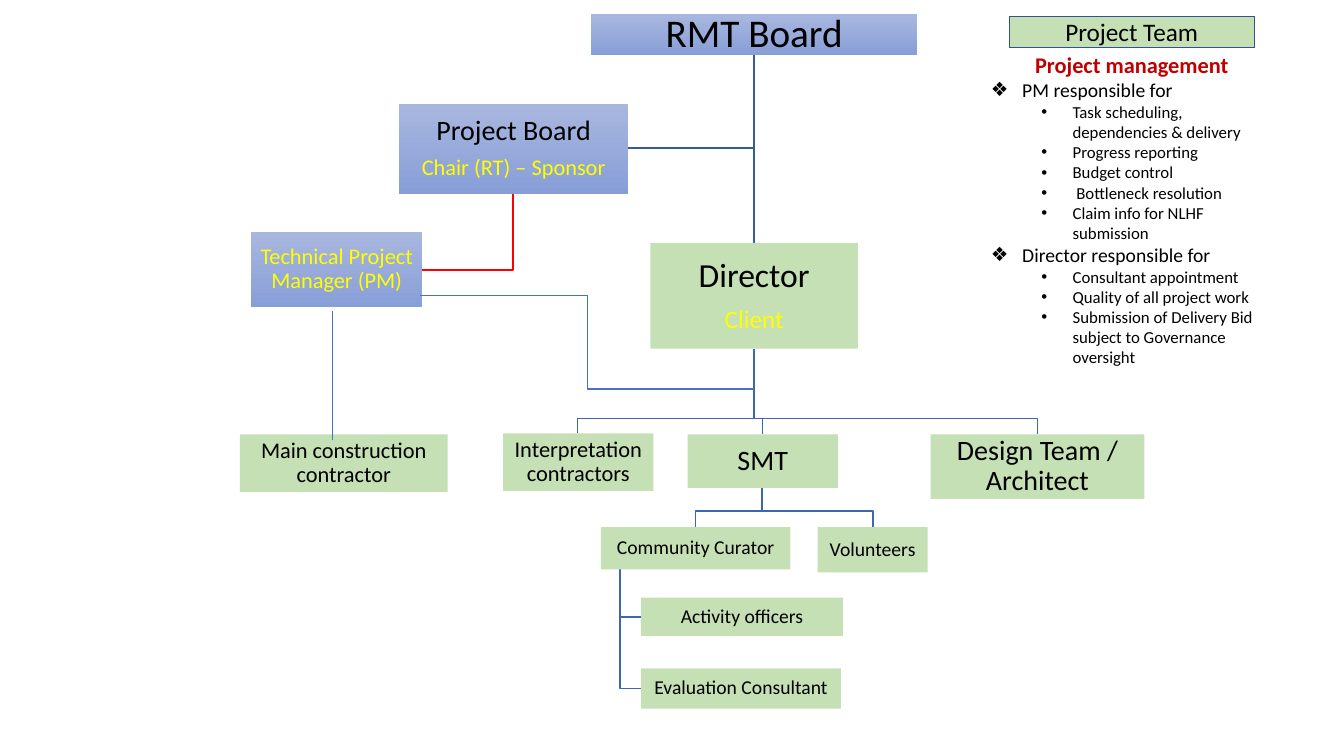
"""Builds the project governance organisation chart slide."""
from lxml import etree
from pptx import Presentation
from pptx.dml.color import RGBColor
from pptx.enum import shapes, text
from pptx.oxml import ns
from pptx.util import Inches, Pt

GREEN, BLACK, YELLOW, RED = "C5E0B4", "000000", "FFFF00", "FF0000"
NAVY, BLUE, ACCENT = "365B9D", "3E67B2", "4472C4"
GRADIENT = ("A8B7DF", "889ED7")
CENTER = text.PP_ALIGN.CENTER

BOXES = {
    "board": (5.86, 0.14, 3.24, 0.41, GRADIENT, [("RMT Board", 28, BLACK)]),
    "director": (6.45, 2.41, 2.06, 1.05, GREEN,
                 [("Director", 24, BLACK), ("Client", 18, YELLOW)]),
    "contractor": (2.38, 4.31, 2.06, 0.57, GREEN,
                   [("Main construction contractor", 16, BLACK)]),
    "interpretation": (4.99, 4.3, 1.49, 0.57, GREEN,
                       [("Interpretation contractors", 16, BLACK)]),
    "smt": (6.82, 4.31, 1.49, 0.53, GREEN, [("SMT", 20, BLACK)]),
    "curator": (5.96, 5.23, 1.88, 0.42, GREEN, [("Community Curator", 14, BLACK)]),
    "activity": (6.36, 5.93, 2, 0.38, GREEN, [("Activity officers", 14, BLACK)]),
    "evaluation": (6.36, 6.63, 1.98, 0.4, GREEN, [("Evaluation Consultant", 14, BLACK)]),
    "volunteers": (8.11, 5.23, 1.09, 0.45, GREEN, [("Volunteers", 14, BLACK)]),
    "design": (9.23, 4.31, 2.12, 0.64, GREEN, [("Design Team / Architect", 20, BLACK)]),
    "project_board": (3.96, 1.03, 2.27, 0.89, GRADIENT,
                      [("Project Board", 20, BLACK), ("Chair (RT) – Sponsor", 16, YELLOW)]),
    "manager": (2.49, 2.3, 1.7, 0.75, GRADIENT,
                [("Technical Project Manager (PM)", 16, YELLOW)]),
}

DUTIES = {
    "PM responsible for": [
        "Task scheduling, dependencies & delivery",
        "Progress reporting",
        "Budget control",
        " Bottleneck resolution",
        "Claim info for NLHF submission",
    ],
    "Director responsible for": [
        "Consultant appointment",
        "Quality of all project work",
        "Submission of Delivery Bid subject to Governance oversight",
    ],
}


def rgb(value):
    """Return the colour for a hex string."""
    return RGBColor.from_string(value)


def apply(obj, values):
    """Set each attribute of an object from a dict."""
    for name, value in values.items():
        setattr(obj, name, value)


def write(p, words, size, color, bold=False):
    """Add one formatted run to a paragraph."""
    r = p.add_run()
    r.text = words
    apply(r.font, {"name": "Calibri", "size": Pt(size), "bold": bold})
    r.font.color.rgb = rgb(color)


def paint(sp, fill):
    """Fill a shape with one colour or a vertical gradient."""
    if isinstance(fill, str):
        sp.fill.solid()
        sp.fill.fore_color.rgb = rgb(fill)
        return
    sp.fill.gradient()
    sp.fill.gradient_angle = 270
    for stop, color in zip(sp.fill.gradient_stops, fill):
        stop.color.rgb = rgb(color)


def stroke(sp, color, width):
    """Set the outline colour and width."""
    sp.line.color.rgb = rgb(color)
    sp.line.width = Pt(width)


def add_box(s, left, top, width, height, fill, lines):
    """Add a filled rectangle with centred lines of text."""
    sp = s.shapes.add_shape(shapes.MSO_SHAPE.RECTANGLE, Inches(left), Inches(top),
                            Inches(width), Inches(height))
    sp.shadow.inherit = False
    paint(sp, fill)
    sp.line.fill.background()
    tf = sp.text_frame
    margins = ("margin_left", "margin_top", "margin_right", "margin_bottom")
    apply(tf, dict.fromkeys(margins, Inches(0.01)))
    apply(tf, {"word_wrap": True, "vertical_anchor": text.MSO_ANCHOR.MIDDLE})
    for i, (words, size, color) in enumerate(lines):
        p = tf.add_paragraph() if i else tf.paragraphs[0]
        apply(p, {"alignment": CENTER, "line_spacing": 0.9,
                  "space_after": Pt(round(0.35 * size, 1))})
        write(p, words, size, color)
    return sp


def add_route(s, points, color):
    """Add an open line through the points."""
    start, *rest = [(Inches(x), Inches(y)) for x, y in points]
    builder = s.shapes.build_freeform(*start)
    builder.add_line_segments(rest, close=False)
    sp = builder.convert_to_shape()
    sp.shadow.inherit = False
    sp.fill.background()
    stroke(sp, color, 1)


def add_branches(s, x, top, bend, ends):
    """Add elbow lines from one parent down to each child."""
    for child, bottom in ends:
        add_route(s, [(x, top), (x, bend), (child, bend), (child, bottom)], BLUE)


def add_link(s, kind, start, end, color, width):
    """Add a connector between two points."""
    line = s.shapes.add_connector(kind, *map(Inches, start + end))
    stroke(line, color, width)
    etree.SubElement(line._element.spPr, ns.qn("a:effectLst"))
    return line


def add_bullet(tf, words, char, level, size):
    """Add a bulleted paragraph with a hanging indent."""
    p = tf.add_paragraph()
    p.level = level
    pPr = p._p.get_or_add_pPr()
    pPr.set("marL", str(Inches(0.31 + 0.5 * level)))
    pPr.set("indent", str(Inches(-0.31)))
    etree.SubElement(pPr, ns.qn("a:buFont")).set("typeface", "Arial")
    etree.SubElement(pPr, ns.qn("a:buChar")).set("char", char)
    write(p, words, size, BLACK)


def add_duties(s):
    """Add the project management responsibilities."""
    tf = s.shapes.add_textbox(Inches(9.73), Inches(0.46), Inches(2.99), Inches(3.26)).text_frame
    apply(tf, {"word_wrap": True, "auto_size": text.MSO_AUTO_SIZE.SHAPE_TO_FIT_TEXT})
    tf.paragraphs[0].alignment = CENTER
    write(tf.paragraphs[0], "Project management", 16, "C00000", True)
    for role, tasks in DUTIES.items():
        add_bullet(tf, role, "❖", 0, 14)
        for task in tasks:
            add_bullet(tf, task, "•", 1, 12)


def main():
    """Build and save the slide."""
    prs = Presentation()
    apply(prs, {"slide_width": Inches(13.33), "slide_height": Inches(7.5)})
    s = prs.slides.add_slide(prs.slide_layouts[6])

    add_route(s, [(5.09, 1.92), (5.09, 2.68), (4.19, 2.68)], RED)
    add_route(s, [(7.48, 0.55), (7.48, 1.47), (6.23, 1.47)], NAVY)
    add_branches(s, 7.48, 3.46, 4.15, [(10.29, 4.31), (7.56, 4.31), (5.73, 4.3)])
    add_branches(s, 7.56, 4.83, 5.07, [(8.66, 5.23), (6.9, 5.23)])
    for y in (6.83, 6.12):
        add_route(s, [(6.15, 5.65), (6.15, y), (6.36, y)], BLUE)
    reporting = add_link(s, shapes.MSO_CONNECTOR.STRAIGHT, (7.48, 0.55), (7.48, 2.41), NAVY, 1)

    boxes = {name: add_box(s, *box) for name, box in BOXES.items()}
    reporting.begin_connect(boxes["board"], 2)
    reporting.end_connect(boxes["director"], 0)

    add_link(s, shapes.MSO_CONNECTOR.ELBOW, (4.17, 2.93), (7.48, 3.86), ACCENT, 1)
    add_duties(s)
    team = add_box(s, 10.01, 0.16, 2.43, 0.31, GREEN, [("Project Team", 18, BLACK)])
    apply(team.text_frame.paragraphs[0], {"line_spacing": 1.0, "space_after": Pt(0)})
    stroke(team, "325491", 0.75)
    add_link(s, shapes.MSO_CONNECTOR.STRAIGHT, (3.3, 4.37), (3.3, 3.09), ACCENT, 0.5)
    prs.save("out.pptx")


if __name__ == "__main__":
    main()
